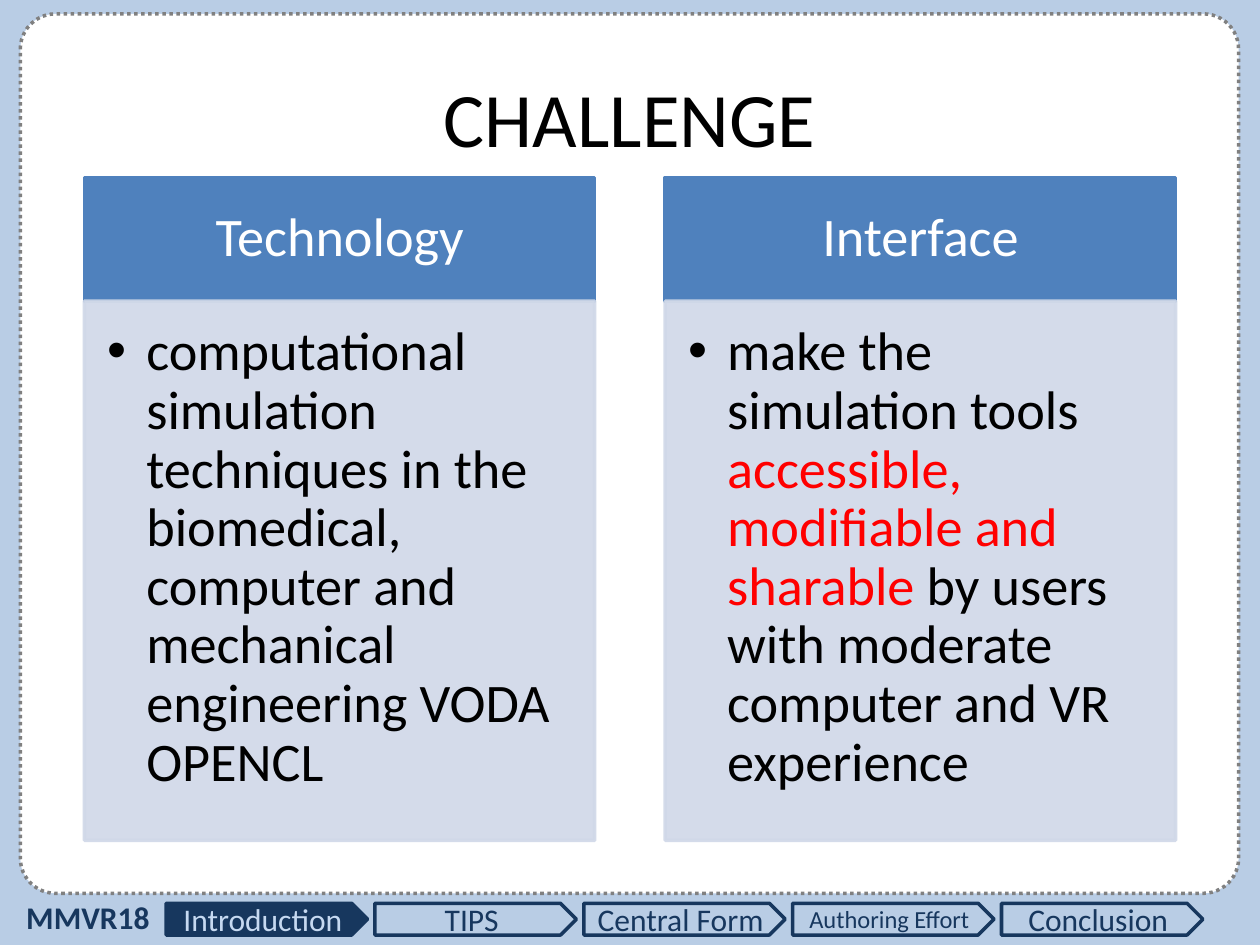
from lxml import etree
from pptx import Presentation
from pptx.dml.color import RGBColor
from pptx.enum.dml import MSO_LINE
from pptx.enum.shapes import MSO_SHAPE
from pptx.enum.text import MSO_ANCHOR, MSO_AUTO_SIZE, PP_ALIGN
from pptx.oxml.ns import qn
from pptx.util import Cm, Pt

ROUNDED, PENTAGON = MSO_SHAPE.ROUNDED_RECTANGLE, MSO_SHAPE.PENTAGON
MIDDLE, TOP = MSO_ANCHOR.MIDDLE, MSO_ANCHOR.TOP
CENTER, LEFT = PP_ALIGN.CENTER, PP_ALIGN.LEFT
DOTTED = MSO_LINE.ROUND_DOT
NO_AUTOFIT = MSO_AUTO_SIZE.NONE

SKY = RGBColor(0xB9, 0xCD, 0xE5)
WHITE = RGBColor(0xFF, 0xFF, 0xFF)
GRAY = RGBColor(0x80, 0x80, 0x80)
NAVY = RGBColor(0x17, 0x37, 0x5E)
PALE = RGBColor(0xC6, 0xD9, 0xF1)
BLUE = RGBColor(0x4F, 0x81, 0xBD)
PANEL = RGBColor(0xD0, 0xD8, 0xE8)
BLACK = RGBColor(0, 0, 0)
RED = RGBColor(0xFF, 0, 0)
FONT = "Calibri"

TITLE = "CHALLENGE"
COLUMNS = [
    ("Technology", [
        ("computational simulation techniques in the biomedical, computer "
         "and mechanical engineering VODA OPENCL", BLACK),
    ]),
    ("Interface", [
        ("make the simulation tools ", BLACK),
        ("accessible, modifiable and sharable ", RED),
        ("by users with moderate computer and VR experience", BLACK),
    ]),
]
EVENT = "MMVR18"
SECTIONS = [("Introduction", 18), ("TIPS", 18), ("Central Form", 18),
            ("Authoring Effort", 14), ("Conclusion", 18)]
CURRENT_SECTION = "Introduction"

COLUMN_LEFT, COLUMN_PITCH, COLUMN_WIDTH = 1.7, 11.71, 10.29
HEADING_TOP, HEADING_HEIGHT, LIST_HEIGHT = 3.58, 2.49, 10.87
SECTION_LEFT, SECTION_PITCH = 3.35, 4.21


def place(shape, left, top, width, height):
    shape.left, shape.top = Cm(left), Cm(top)
    shape.width, shape.height = Cm(width), Cm(height)


def paint(shape, fill, line, dash=None):
    if fill is None:
        shape.fill.background()
    else:
        shape.fill.solid()
        shape.fill.fore_color.rgb = fill
    shape.line.color.rgb = line
    shape.line.width = Pt(2)
    if dash is not None:
        shape.line.dash_style = dash


def style(paragraph, size, color=None, bold=False, align=CENTER):
    paragraph.alignment = align
    font = paragraph.font
    font.name, font.size, font.bold = FONT, Pt(size), bold
    if color is not None:
        font.color.rgb = color


def set_frame(frame, anchor, insets):
    frame.word_wrap = True
    frame.auto_size = NO_AUTOFIT
    frame.vertical_anchor = anchor
    frame.margin_left, frame.margin_top, frame.margin_right, frame.margin_bottom = map(Cm, insets)


def make_translucent(shape, percent):
    for color in shape.fill._xPr.iter(qn("a:srgbClr")):
        etree.SubElement(color, qn("a:alpha")).set("val", str(percent * 1000))


def add_column(heading, points, left, title, runs):
    place(heading, left, HEADING_TOP, COLUMN_WIDTH, HEADING_HEIGHT)
    paint(heading, BLUE, BLUE)
    set_frame(heading.text_frame, MIDDLE, (0.61, 0.36, 0.61, 0.36))
    heading.text_frame.text = title
    title_line = heading.text_frame.paragraphs[0]
    style(title_line, 31, WHITE)

    place(points, left, HEADING_TOP + HEADING_HEIGHT, COLUMN_WIDTH, LIST_HEIGHT)
    paint(points, PANEL, PANEL)
    make_translucent(points, 90)
    set_frame(points.text_frame, TOP, (0.46, 0.46, 0.61, 0.69))
    point = points.text_frame.paragraphs[0]
    properties = point._p.get_or_add_pPr()
    properties.set("marL", str(Cm(0.79)))
    properties.set("indent", str(-Cm(0.79)))
    style(point, 31, align=LEFT)
    for text, color in runs:
        run = point.add_run()
        run.text = text
        run.font.color.rgb = color

    for paragraph in (title_line, point):
        paragraph.line_spacing = 0.9
        paragraph.space_before = Pt(0)


def add_navigation(shapes):
    event = shapes.add_textbox(Cm(0.28), Cm(17.98), Cm(3.02), Cm(1.02))
    event.text_frame.word_wrap = False
    event.text_frame.text = EVENT
    style(event.text_frame.paragraphs[0], 18, NAVY, bold=True, align=LEFT)

    for index, (name, size) in enumerate(SECTIONS):
        section = shapes.add_shape(PENTAGON, Cm(SECTION_LEFT + index * SECTION_PITCH),
                                   Cm(18.21), Cm(4.06), Cm(0.64))
        section.shadow.inherit = False
        current = name == CURRENT_SECTION
        paint(section, NAVY if current else None, NAVY)
        section.text_frame.vertical_anchor = MIDDLE
        section.text_frame.text = name
        style(section.text_frame.paragraphs[0], size, PALE if current else NAVY)


def main():
    presentation = Presentation()
    presentation.slide_width, presentation.slide_height = Cm(25.4), Cm(19.05)
    slide = presentation.slides.add_slide(presentation.slide_layouts.get_by_name("Comparison"))
    slide.background.fill.solid()
    slide.background.fill.fore_color.rgb = SKY
    title, *column_parts = slide.placeholders

    card = slide.shapes.add_shape(ROUNDED, Cm(0.41), Cm(0.28), Cm(24.56), Cm(17.73))
    card.adjustments[0] = 0.04
    card.shadow.inherit = False
    paint(card, WHITE, GRAY, DOTTED)
    title._element.addprevious(card._element)

    place(title, 1.27, 0.76, 22.86, 3.18)
    title.text_frame.text = TITLE
    title.text_frame.vertical_anchor = MIDDLE
    style(title.text_frame.paragraphs[0], 44, BLACK)

    for index, (heading, runs) in enumerate(COLUMNS):
        heading_part, list_part = column_parts[2 * index:2 * index + 2]
        add_column(heading_part, list_part, COLUMN_LEFT + index * COLUMN_PITCH, heading, runs)

    add_navigation(slide.shapes)
    presentation.save("out.pptx")


if __name__ == "__main__":
    main()
